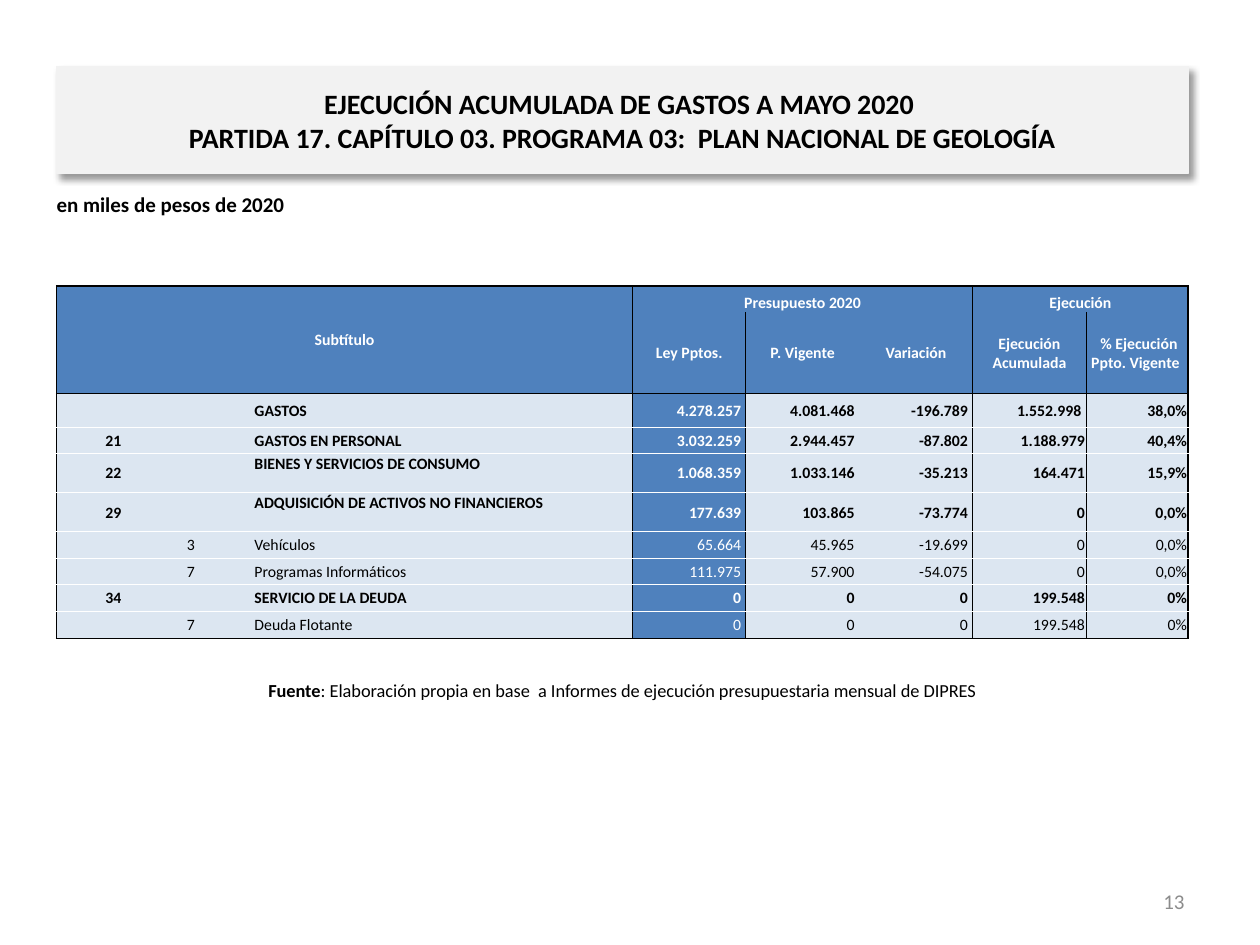
from lxml.etree import SubElement
from pptx import Presentation
from pptx.dml.color import RGBColor
from pptx.enum.text import MSO_ANCHOR as Anchor, MSO_AUTO_SIZE as AutoSize, PP_ALIGN as Align
from pptx.oxml.ns import qn
from pptx.util import Inches, Pt

COLORS = {
    "header": "4F81BD", "body": "DCE6F1", "banner": "F2F2F2",
    "ink": "000000", "light": "FFFFFF", "number": "8C8C8C",
}
FONT = "Calibri"
LEFT, WIDTH = 0.45, 8.98
PLAIN_TABLE = "{2D5ABB26-0587-4C30-8999-92F81FD0307C}"

COLUMNS = [0.9, 0.33, 0.33, 3.01, 0.9, 0.9, 0.9, 0.9, 0.81]
ROWS = [0.21, 0.64, 0.27, 0.21, 0.31, 0.31, 0.21, 0.21, 0.21, 0.22]
LABEL, BUDGET, EXECUTION = 3, 4, 7
HEADER_ROWS = 2
TALL_ROWS = (4, 5)
MERGES = [(0, 0, 1, 3), (0, 4, 0, 6), (0, 7, 0, 8)]
HEADINGS = [
    ["Subtítulo", "", "", "", "Presupuesto 2020", "", "", "Ejecución", ""],
    ["", "", "", "", "Ley Pptos.", "P. Vigente", "Variación",
     "Ejecución Acumulada", " % Ejecución Ppto. Vigente "],
]
SPENDING = [
    ["", "", "", "GASTOS", "4.278.257 ", "4.081.468 ", "-196.789 ", "1.552.998 ", "38,0%"],
    ["21", "", "", "GASTOS EN PERSONAL", "3.032.259 ", "2.944.457 ", "-87.802 ", "1.188.979", "40,4%"],
    ["22", "", "", "BIENES Y SERVICIOS DE CONSUMO", "1.068.359 ", "1.033.146 ", "-35.213 ", "164.471", "15,9%"],
    ["29", "", "", "ADQUISICIÓN DE ACTIVOS NO FINANCIEROS", "177.639 ", "103.865 ", "-73.774 ", "0", "0,0%"],
    ["", "3", "", "Vehículos", "65.664 ", "45.965 ", "-19.699 ", "0", "0,0%"],
    ["", "7", "", "Programas Informáticos", "111.975 ", "57.900 ", "-54.075 ", "0", "0,0%"],
    ["34", "", "", "SERVICIO DE LA DEUDA", "0 ", "0 ", "0 ", "199.548", "0%"],
    ["", "7", "", "Deuda Flotante", "0 ", "0 ", "0 ", "199.548", "0%"],
]


def rgb(name):
    return RGBColor.from_string(COLORS[name])


def apply(target, values):
    for key, value in values.items():
        setattr(target, key, value)


def format_run(run, size, color="ink", bold=False):
    apply(run.font, {"name": FONT, "size": Pt(size), "bold": bold})
    run.font.color.rgb = rgb(color)


def place(shape, box):
    apply(shape, dict(zip(("left", "top", "width", "height"), map(Inches, box))))


def add_banner(slide, box, lines):
    banner = slide.shapes.title
    place(banner, box)
    banner.fill.solid()
    banner.fill.fore_color.rgb = rgb("banner")
    banner.line.color.rgb = rgb("banner")
    banner.line.width = Pt(0.75)
    effects = SubElement(banner._element.spPr, qn("a:effectLst"))
    shadow = SubElement(effects, qn("a:outerShdw"), blurRad=str(Pt(4)), dist=str(Pt(3)),
                        dir="2700000", algn="tl", rotWithShape="0")
    tint = SubElement(shadow, qn("a:srgbClr"), val=COLORS["ink"])
    SubElement(tint, qn("a:alpha"), val="40000")
    frame = banner.text_frame
    frame.text = "\v".join(lines)
    apply(frame, {"auto_size": AutoSize.NONE, "word_wrap": True, "vertical_anchor": Anchor.MIDDLE})
    paragraph = frame.paragraphs[0]
    paragraph.alignment = Align.CENTER
    for run in paragraph.runs:
        format_run(run, 16, bold=True)


def add_note(slide, box, parts, size, align, anchor=Anchor.MIDDLE, color="ink"):
    frame = slide.shapes.add_textbox(*map(Inches, box)).text_frame
    apply(frame, {"word_wrap": True, "vertical_anchor": anchor})
    paragraph = frame.paragraphs[0]
    paragraph.alignment = align
    for words, bold in parts:
        run = paragraph.add_run()
        run.text = words
        format_run(run, size, color, bold)


def cell_borders(top, left, bottom, right):
    last_row, last_column = len(ROWS) - 1, len(COLUMNS) - 1
    borders = {}
    if left == 0 or left in (BUDGET, EXECUTION):
        borders["lnL"] = ("ink", 0.5 if left else 1)
    if right == last_column or right + 1 in (BUDGET, EXECUTION):
        borders["lnR"] = ("ink", 1 if right == last_column else 0.5)
    if top == 0 or top == HEADER_ROWS:
        borders["lnT"] = ("ink", 0.5 if top else 1)
    elif top > HEADER_ROWS:
        borders["lnT"] = ("light", 0.5)
    if bottom == last_row or bottom + 1 == HEADER_ROWS:
        borders["lnB"] = ("ink", 1 if bottom == last_row else 0.5)
    elif bottom >= HEADER_ROWS:
        borders["lnB"] = ("light", 0.5)
    return borders


def draw_borders(cell, borders):
    properties = cell._tc.get_or_add_tcPr()
    for side, (color, width) in borders.items():
        line = SubElement(properties, qn(f"a:{side}"), w=str(Pt(width)))
        fill = SubElement(line, qn("a:solidFill"))
        SubElement(fill, qn("a:srgbClr"), val=COLORS[color])


def cell_layout(row, column):
    if row < HEADER_ROWS:
        grouped = row == 0 and column >= BUDGET
        return Align.CENTER, Anchor.BOTTOM if grouped else Anchor.MIDDLE
    if column < LABEL:
        return Align.CENTER, Anchor.MIDDLE
    if column == LABEL:
        return Align.JUSTIFY, Anchor.TOP if row in TALL_ROWS else Anchor.MIDDLE
    return Align.RIGHT, Anchor.MIDDLE


def fill_cell(cell, row, column, words, bold):
    margin = Inches(0.01)
    align, anchor = cell_layout(row, column)
    apply(cell, {"margin_left": margin, "margin_right": margin, "margin_top": margin,
                 "margin_bottom": 0, "vertical_anchor": anchor})
    draw_borders(cell, cell_borders(row, column, row + cell.span_height - 1,
                                    column + cell.span_width - 1))
    dark = row < HEADER_ROWS or column == BUDGET
    cell.fill.solid()
    cell.fill.fore_color.rgb = rgb("header" if dark else "body")
    paragraph = cell.text_frame.paragraphs[0]
    paragraph.alignment = align
    if words:
        run = paragraph.add_run()
        run.text = words
        format_run(run, 9, "light" if dark else "ink", bold)
    else:
        SubElement(paragraph._p, qn("a:endParaRPr"), sz="900")


def add_budget_table(slide, left, top):
    box = (left, top, sum(COLUMNS), sum(ROWS))
    table = slide.shapes.add_table(len(ROWS), len(COLUMNS), *map(Inches, box)).table
    apply(table, {"first_row": False, "horz_banding": False})
    table._tbl.tblPr.find(qn("a:tableStyleId")).text = PLAIN_TABLE
    for column, width in zip(table.columns, COLUMNS):
        column.width = Inches(width)
    for row, height in zip(table.rows, ROWS):
        row.height = Inches(height)
    for first_row, first_column, last_row, last_column in MERGES:
        table.cell(first_row, first_column).merge(table.cell(last_row, last_column))
    for row, entries in enumerate(HEADINGS + SPENDING):
        bold = not entries[1] or row < HEADER_ROWS
        for column, words in enumerate(entries):
            fill_cell(table.cell(row, column), row, column, words, bold)


def main():
    deck = Presentation()
    apply(deck, {"slide_width": Inches(10), "slide_height": Inches(7.5)})
    slide = deck.slides.add_slide(deck.slide_layouts[5])
    add_banner(slide, (LEFT, 0.53, WIDTH, 0.85), [
        "EJECUCIÓN ACUMULADA DE GASTOS A MAYO 2020 ",
        "PARTIDA 17. CAPÍTULO 03. PROGRAMA 03:  PLAN NACIONAL DE GEOLOGÍA",
    ])
    add_note(slide, (0.35, 1.47, 8.15, 0.39), [("en miles de pesos de 2020", True)],
             12, Align.LEFT, Anchor.TOP)
    add_budget_table(slide, LEFT, 2.27)
    add_note(slide, (LEFT, 5.32, WIDTH, 0.31), [
        ("Fuente", True),
        (": Elaboración propia en base  a Informes de ejecución presupuestaria mensual de DIPRES", False),
    ], 10.5, Align.CENTER)
    add_note(slide, (7.17, 6.95, 2.33, 0.4), [("13", False)], 12, Align.RIGHT, color="number")
    deck.save("out.pptx")


if __name__ == "__main__":
    main()
